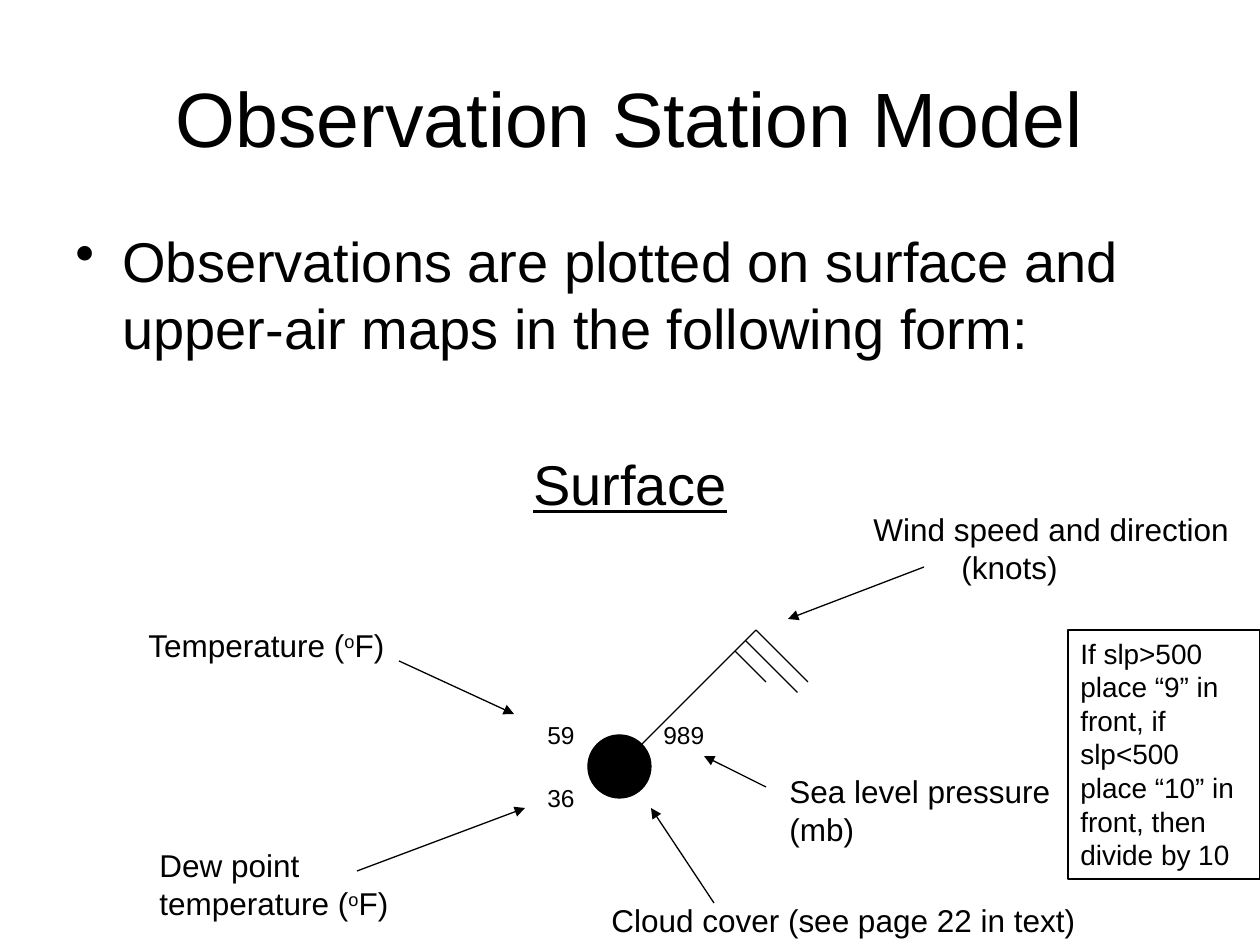
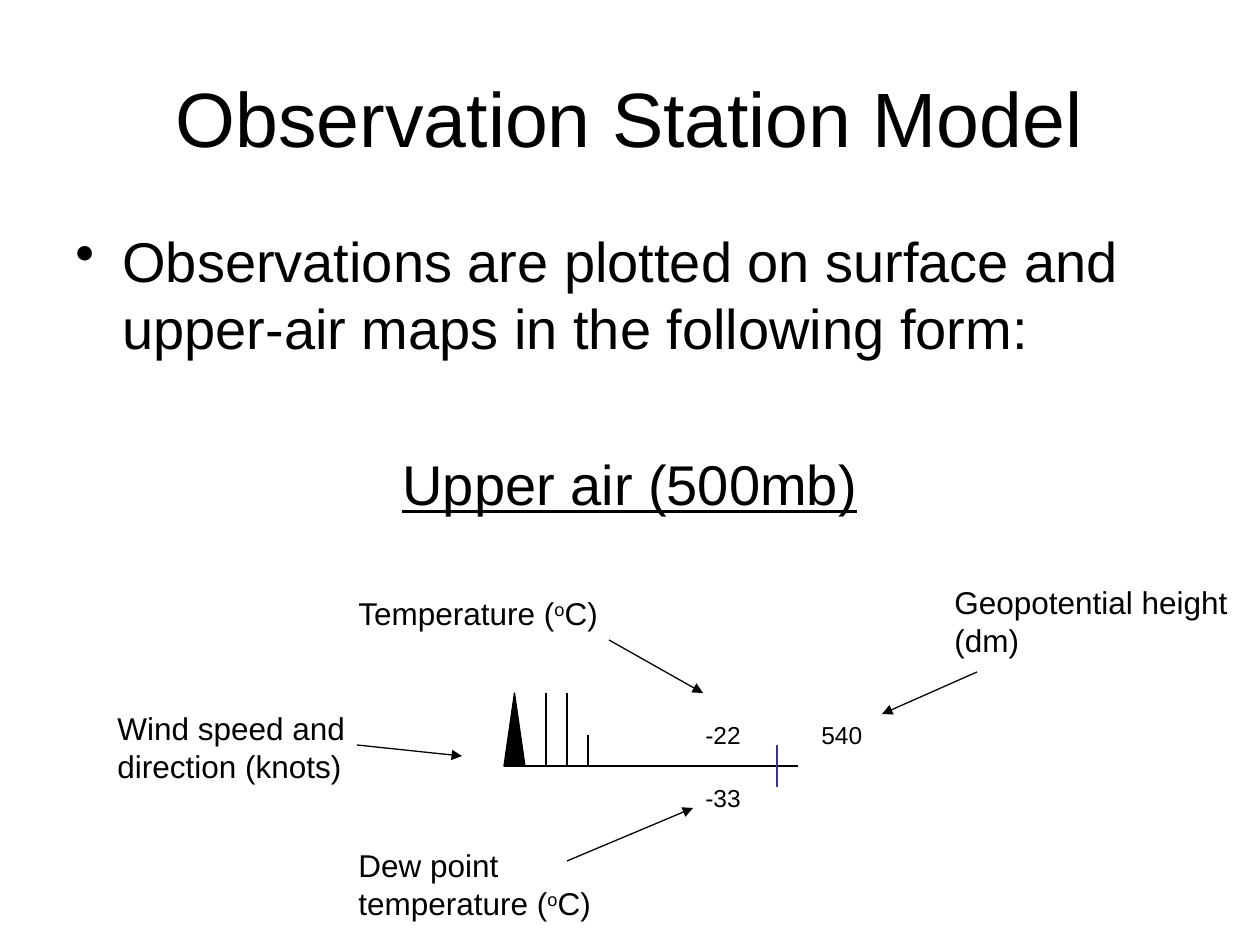
import dataclasses

import lxml.etree
import pptx
import pptx.dml.color
import pptx.enum.shapes
import pptx.enum.text
import pptx.oxml.ns
import pptx.util


@dataclasses.dataclass(frozen=True)
class Theme:
    font: str = "Arial"
    black: str = "000000"
    indigo: str = "333399"
    title: int = 44
    body: int = 32
    label: int = 18
    note: int = 16
    reading: int = 14
    line: float = 0.75


theme = Theme()
qn = pptx.oxml.ns.qn
color = pptx.dml.color.RGBColor.from_string
center = pptx.enum.text.PP_ALIGN.CENTER
shapes = pptx.enum.shapes.MSO_SHAPE
px = 914400 / 126


def add_text(slide, left, top, width, height, text, size):
    box = slide.shapes.add_textbox(*(round(value * px) for value in (left, top, width, height)))
    text_frame = box.text_frame
    text_frame.word_wrap = True
    for index, line in enumerate(text.split("\n")):
        paragraph = text_frame.add_paragraph() if index else text_frame.paragraphs[0]
        for position, part in enumerate(line.split("^")):
            run = paragraph.add_run()
            run.text = part
            run.font.name = theme.font
            run.font.size = pptx.util.Pt(size)
            run.font.color.rgb = color(theme.black)
            if position % 2:
                run._r.get_or_add_rPr().set("baseline", "30000")
    return box


def add_line(slide, start_x, start_y, end_x, end_y, line_color=theme.black, arrow=False):
    connector = slide.shapes.add_connector(
        pptx.enum.shapes.MSO_CONNECTOR.STRAIGHT,
        *(round(value * px) for value in (start_x, start_y, end_x, end_y)))
    connector.line.color.rgb = color(line_color)
    connector.line.width = pptx.util.Pt(theme.line)
    if arrow:
        lxml.etree.SubElement(connector.line._get_or_add_ln(), qn("a:tailEnd"), type="triangle")
    lxml.etree.SubElement(connector._element.spPr, qn("a:effectLst"))


presentation = pptx.Presentation()
presentation.slide_width = round(1260 * px)
presentation.slide_height = round(945 * px)

slides = []
for heading in ("Surface", "Upper air (500mb)"):
    slide = presentation.slides.add_slide(presentation.slide_layouts[6])
    slides.append(slide)

    title = add_text(slide, 63, 38, 1134, 157, "Observation Station Model", theme.title)
    title.text_frame.vertical_anchor = pptx.enum.text.MSO_ANCHOR.MIDDLE
    title.text_frame.paragraphs[0].alignment = center

    intro = "Observations are plotted on surface and upper-air maps in the following form:"
    body = add_text(slide, 63, 220, 1134, 624, f"{intro}\n{heading}", theme.body)
    bullet_paragraph, heading_paragraph = body.text_frame.paragraphs
    properties = bullet_paragraph._p.get_or_add_pPr()
    properties.set("marL", str(round(47 * px)))
    properties.set("indent", str(round(-47 * px)))
    lxml.etree.SubElement(properties, qn("a:buChar"), char="•")
    heading_paragraph.alignment = center
    heading_paragraph.space_before = pptx.util.Pt(51)
    heading_paragraph.runs[0].font.underline = True

surface, upper_air = slides

station = surface.shapes.add_shape(
    shapes.OVAL, *(round(value * px) for value in (588, 735, 63, 63)))
pennant = upper_air.shapes.add_shape(
    shapes.ISOSCELES_TRIANGLE, *(round(value * px) for value in (504, 693, 21, 73)))
for shape in (station, pennant):
    shape.shadow.inherit = False
    shape.fill.solid()
    shape.fill.fore_color.rgb = color(theme.black)
    shape.line.color.rgb = color(theme.black)
    shape.line.width = pptx.util.Pt(theme.line)

add_line(surface, 640, 746, 756, 630)
for index, length in enumerate((52, 52, 31)):
    barb_x, barb_y = 756 - 10.5 * index, 630 + 10.5 * index
    add_line(surface, barb_x, barb_y, barb_x + length, barb_y + length)

add_line(upper_air, 504, 766, 798, 766)
add_line(upper_air, 777, 745, 777, 787, theme.indigo)
for index, length in enumerate((73, 73, 31)):
    barb_x = 546 + 21 * index
    add_line(upper_air, barb_x, 766, barb_x, 766 - length)

for slide, left, top, reading in (
    (surface, 651, 714, "989"),
    (surface, 535, 777, "36"),
    (surface, 535, 714, "59"),
    (upper_air, 809, 714, "540"),
    (upper_air, 693, 777, "-33"),
    (upper_air, 693, 714, "-22"),
):
    add_text(slide, left, top, 86, 42, reading, theme.reading)

for slide, left, top, width, height, label in (
    (surface, 136, 620, 318, 50, "Temperature (^o^F)"),
    (surface, 147, 840, 262, 88, "Dew point temperature (^o^F)"),
    (surface, 777, 766, 305, 88, "Sea level pressure\n(mb)"),
    (surface, 599, 895, 494, 50, "Cloud cover (see page 22 in text)"),
    (upper_air, 346, 588, 318, 50, "Temperature (^o^C)"),
    (upper_air, 346, 840, 318, 88, "Dew point temperature (^o^C)"),
    (upper_air, 105, 703, 284, 88, "Wind speed and direction (knots)"),
    (upper_air, 942, 577, 318, 88, "Geopotential height (dm)"),
):
    add_text(slide, left, top, width, height, label, theme.label)

wind = add_text(surface, 861, 504, 399, 88, "Wind speed and direction\n(knots)", theme.label)
wind.text_frame.paragraphs[1]._p.get_or_add_pPr().set("marL", str(round(88 * px)))

pressure_rule = add_text(
    surface, 1068, 630, 192, 249,
    "If slp>500 place “9” in front, if slp<500 place “10” in front, then divide by 10",
    theme.note)
pressure_rule.line.color.rgb = color(theme.black)
pressure_rule.line.width = pptx.util.Pt(theme.line)

for slide, *ends in (
    (surface, 399, 661, 514, 714),
    (surface, 357, 871, 525, 808),
    (surface, 924, 567, 788, 619),
    (surface, 766, 787, 704, 756),
    (surface, 714, 903, 651, 808),
    (upper_air, 609, 640, 703, 693),
    (upper_air, 977, 672, 882, 714),
    (upper_air, 567, 861, 693, 808),
    (upper_air, 357, 745, 462, 756),
):
    add_line(slide, *ends, arrow=True)

presentation.save("out.pptx")
